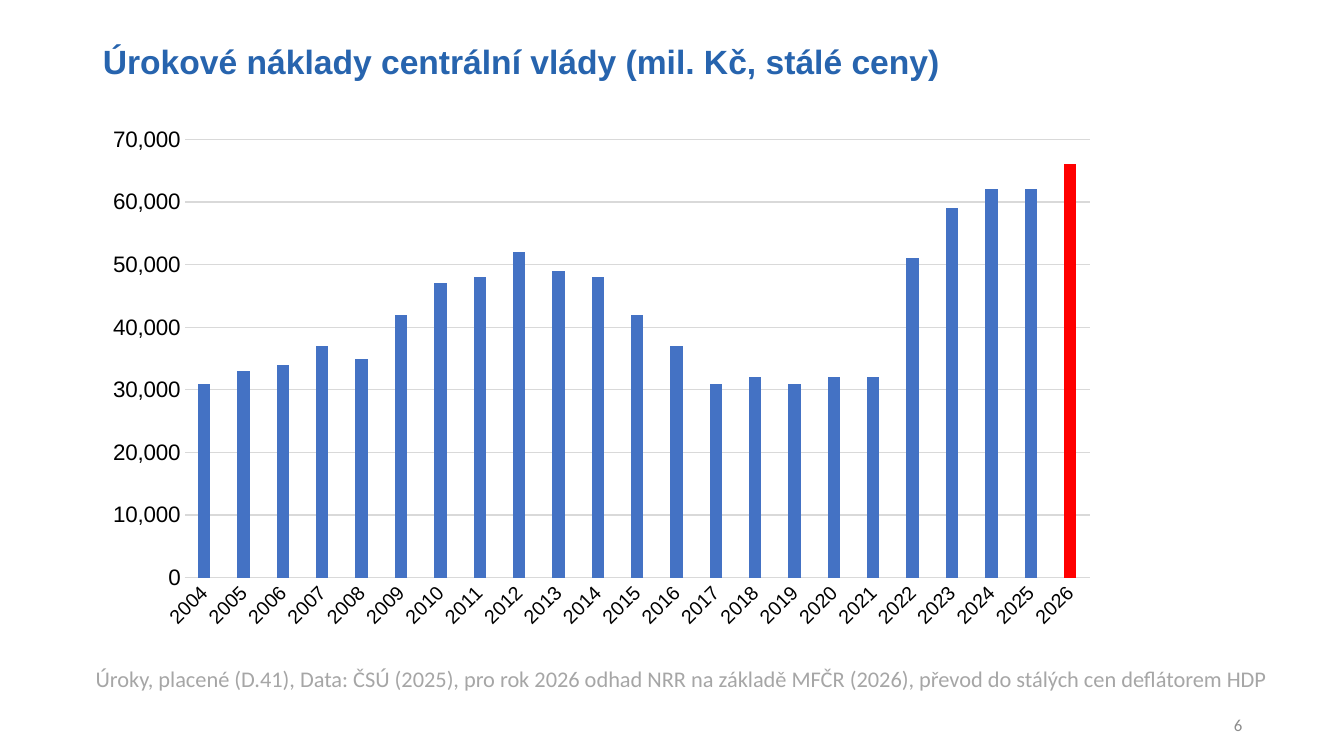
from pptx import Presentation
from pptx import util as u
from pptx.chart import data as cd
from pptx.dml import color
from pptx.enum import chart as ch, text as tx

COLORS = {
    "title": "2764AE",
    "bar": "4472C4",
    "mark": "FF0000",
    "grid": "D9D9D9",
    "axis": "000000",
    "note": "A6A6A6",
    "page": "8C8C8C",
}
YEARS = range(2004, 2027)
COSTS = [31000, 33000, 34000, 37000, 35000, 42000, 47000, 48000,
         52000, 49000, 48000, 42000, 37000, 31000, 32000, 31000,
         32000, 32000, 51000, 59000, 62000, 62000, 66000]


def tint(name):
    return color.RGBColor.from_string(COLORS[name])


def style(font, size, hue, face="Arial", bold=False):
    font.name = face
    font.size = u.Pt(size)
    font.bold = bold
    font.color.rgb = tint(hue)


def write(frame, words, size, hue, face="Calibri", bold=False,
          align=tx.PP_ALIGN.LEFT, anchor=tx.MSO_ANCHOR.TOP, space=1.0):
    frame.word_wrap = True
    frame.auto_size = tx.MSO_AUTO_SIZE.NONE
    frame.vertical_anchor = anchor
    para = frame.paragraphs[0]
    para.alignment = align
    para.line_spacing = space
    para.space_before = u.Pt(0)
    run = para.add_run()
    run.text = words
    style(run.font, size, hue, face, bold)


class Deck:
    def __init__(self, width, height):
        self.show = Presentation()
        self.show.slide_width = u.Inches(width)
        self.show.slide_height = u.Inches(height)
        self.slide = None

    def start(self):
        layout = self.show.slide_layouts.get_by_name("Title Only")
        self.slide = self.show.slides.add_slide(layout)

    def title(self, words, box):
        shape = self.slide.shapes.title
        shape.left, shape.top, shape.width, shape.height = map(u.Inches, box)
        write(shape.text_frame, words, 24, "title", face="Arial",
              bold=True, space=0.9)

    def label(self, words, box, **form):
        shape = self.slide.shapes.add_textbox(*map(u.Inches, box))
        write(shape.text_frame, words, **form)

    def axis(self, axis, size):
        axis.major_tick_mark = ch.XL_TICK_MARK.NONE
        axis.minor_tick_mark = ch.XL_TICK_MARK.NONE
        style(axis.tick_labels.font, size, "axis")

    def bars(self, cats, vals, box):
        data = cd.CategoryChartData(number_format="#,##0")
        data.categories = cats
        data.add_series("Úrokové náklady", vals)
        kind = ch.XL_CHART_TYPE.COLUMN_CLUSTERED
        frame = self.slide.shapes.add_chart(kind, *map(u.Inches, box), data)
        chart = frame.chart
        chart.has_legend = False
        chart.has_title = False
        style(chart.font, 10, "axis", face="Calibri")

        years = chart.category_axis
        self.axis(years, 14)
        years.format.line.color.rgb = tint("grid")
        years.format.line.width = u.Pt(0.75)
        years.tick_labels.font._element.getparent().getparent().getparent() \
            .bodyPr.set("rot", "-2700000")

        costs = chart.value_axis
        self.axis(costs, 16)
        costs.minimum_scale = 0
        costs.maximum_scale = 70000
        costs.major_unit = 10000
        costs.format.line.fill.background()
        costs.tick_labels.number_format = "#,##0"
        costs.tick_labels.number_format_is_linked = False
        costs.major_gridlines.format.line.color.rgb = tint("grid")
        costs.major_gridlines.format.line.width = u.Pt(0.75)

        plot = chart.plots[0]
        plot.gap_width = 219
        plot.overlap = -27
        plot.vary_by_categories = False
        row = plot.series[0]
        row.invert_if_negative = False
        row.format.fill.solid()
        row.format.fill.fore_color.rgb = tint("bar")
        last = row.points[len(vals) - 1].format.fill
        last.solid()
        last.fore_color.rgb = tint("mark")

    def save(self):
        self.show.save("out.pptx")


def main():
    deck = Deck(13.33, 7.5)
    deck.start()
    deck.label("6", (9.42, 6.99, 3, 0.4), size=12, hue="page",
               align=tx.PP_ALIGN.RIGHT, anchor=tx.MSO_ANCHOR.MIDDLE)
    deck.bars([str(year) for year in YEARS], COSTS, (0.92, 1.16, 10.09, 5.18))
    deck.title("Úrokové náklady centrální vlády (mil. Kč, stálé ceny)",
               (0.92, 0.4, 11.5, 0.83))
    deck.label("Úroky, placené (D.41), Data: ČSÚ (2025), pro rok 2026 odhad NRR "
               "na základě MFČR (2026), převod do stálých cen deflátorem HDP",
               (0.85, 6.55, 12.01, 0.37), size=16, hue="note")
    deck.save()


if __name__ == "__main__":
    main()
